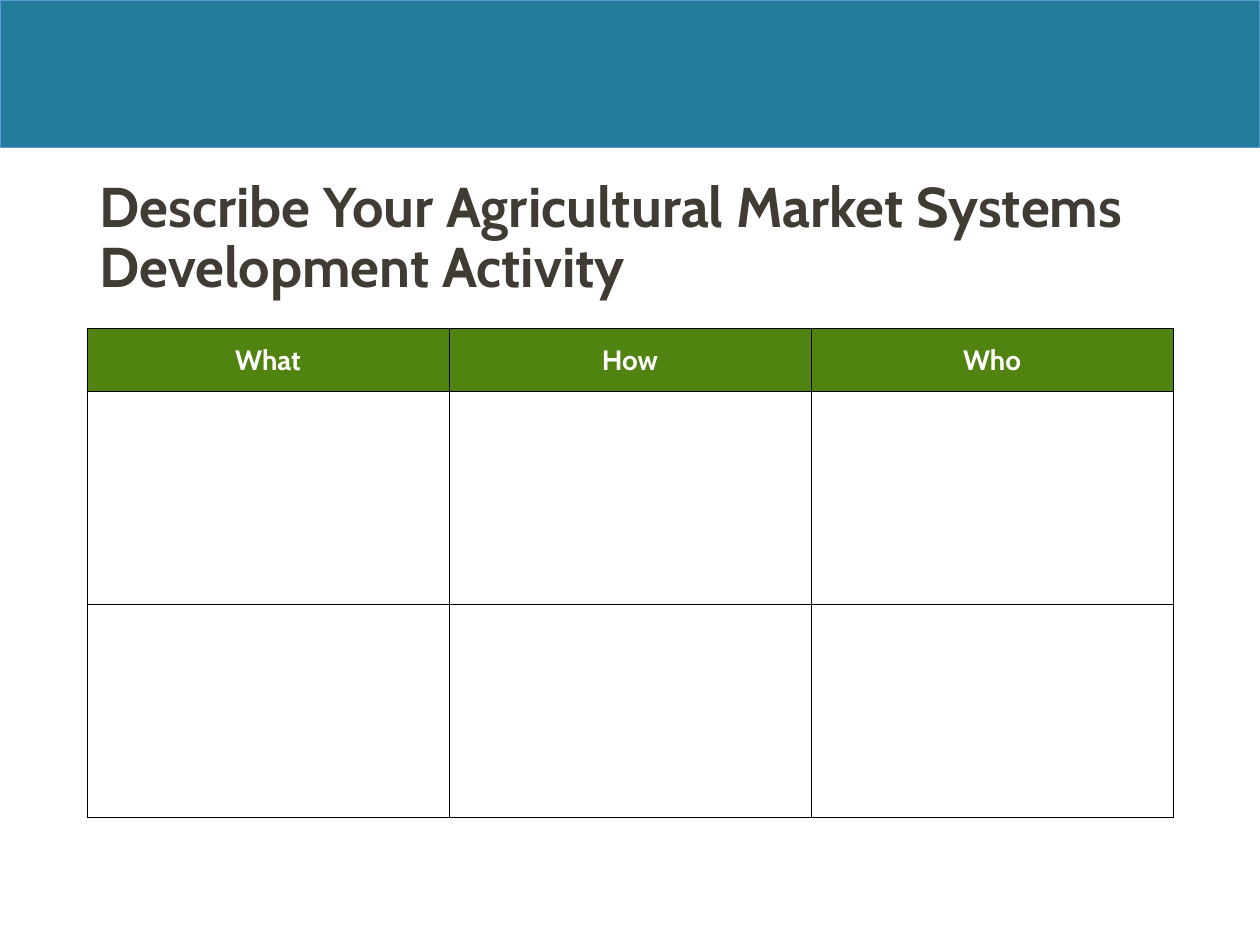
from lxml.etree import SubElement
from pptx import Presentation
from pptx.dml.color import RGBColor
from pptx.enum.shapes import MSO_SHAPE
from pptx.enum.text import MSO_ANCHOR, PP_ALIGN
from pptx.oxml.ns import qn
from pptx.util import Inches, Pt

FONT = "Cabin"
TEAL, BLUE, GREEN = "227C9A", "5B9BD5", "518311"
BROWN, BLACK, WHITE = "403B33", "000000", "FFFFFF"
LEFT, CONTENT_WIDTH = 0.69, 8.62


def color(hex_string):
    return RGBColor.from_string(hex_string)


class SlideBuilder:
    def __init__(self, slide):
        self.slide = slide

    def add_run(self, paragraph, text, size, text_color):
        run = paragraph.add_run()
        run.text = text
        run.font.name = FONT
        run.font.size = Pt(size)
        run.font.bold = True
        run.font.color.rgb = color(text_color)

    def band(self, width, height):
        band = self.slide.shapes.add_shape(
            MSO_SHAPE.RECTANGLE, 0, 0, Inches(width), Inches(height))
        band.shadow.inherit = False
        band.fill.solid()
        band.fill.fore_color.rgb = color(TEAL)
        band.line.color.rgb = color(BLUE)
        band.line.width = Pt(0.5)

    def title(self, text, top, height):
        title = self.slide.shapes.title
        title.left, title.top = Inches(LEFT), Inches(top)
        title.width, title.height = Inches(CONTENT_WIDTH), Inches(height)
        frame = title.text_frame
        frame.word_wrap = True
        frame.vertical_anchor = MSO_ANCHOR.TOP
        paragraph = frame.paragraphs[0]
        paragraph.alignment = PP_ALIGN.LEFT
        paragraph.line_spacing = 0.9
        self.add_run(paragraph, text, 32, BROWN)

    def border(self, cell):
        properties = cell._tc.get_or_add_tcPr()
        for position, side in enumerate(("lnL", "lnR", "lnT", "lnB")):
            line = SubElement(properties, qn(f"a:{side}"), w=str(Pt(0.5)))
            fill = SubElement(line, qn("a:solidFill"))
            SubElement(fill, qn("a:srgbClr"), val=BLACK)
            properties.insert(position, line)

    def table(self, headings, top, row_heights):
        table = self.slide.shapes.add_table(
            len(row_heights), len(headings), Inches(LEFT), Inches(top),
            Inches(CONTENT_WIDTH), Inches(sum(row_heights))).table
        table.horz_banding = False
        for column in table.columns:
            column.width = Inches(CONTENT_WIDTH / len(headings))
        for row, height in zip(table.rows, row_heights):
            row.height = Inches(height)
        for cell in table.iter_cells():
            cell.fill.background()
            self.border(cell)
        for cell, heading in zip(table.rows[0].cells, headings):
            cell.fill.solid()
            cell.fill.fore_color.rgb = color(GREEN)
            cell.vertical_anchor = MSO_ANCHOR.MIDDLE
            cell.margin_left = cell.margin_right = Inches(0.07)
            paragraph = cell.text_frame.paragraphs[0]
            paragraph.alignment = PP_ALIGN.CENTER
            self.add_run(paragraph, heading, 16, WHITE)


def main():
    presentation = Presentation()
    presentation.slide_width = Inches(10)
    presentation.slide_height = Inches(7.5)
    title_only = presentation.slide_layouts[5]
    builder = SlideBuilder(presentation.slides.add_slide(title_only))
    builder.band(10, 1.17)
    builder.title("Describe Your Agricultural Market Systems Development Activity",
                  top=1.37, height=1.2)
    builder.table(("What", "How", "Who"), top=2.61, row_heights=(0.5, 1.69, 1.69))
    presentation.save("out.pptx")


if __name__ == "__main__":
    main()
